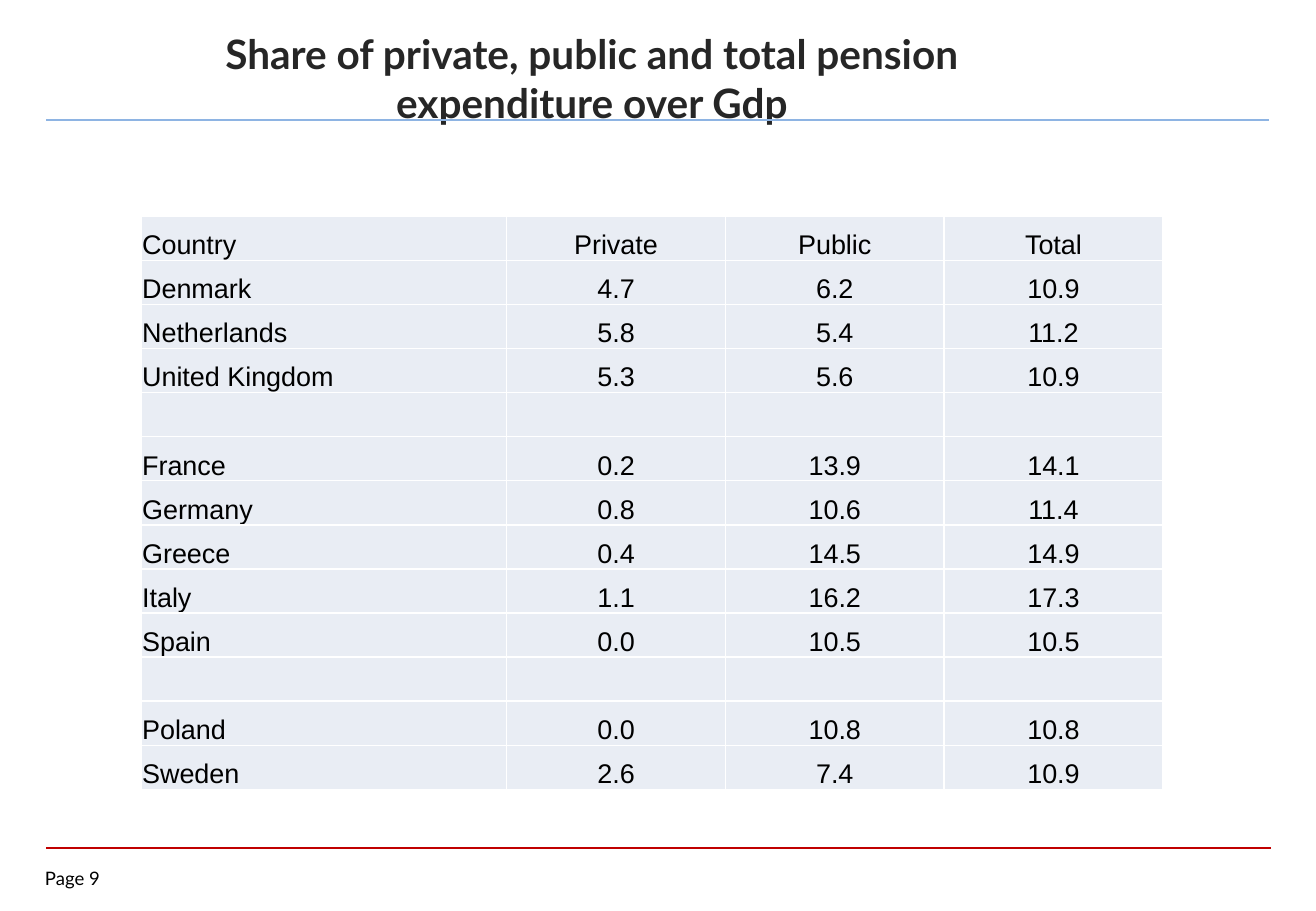
from lxml.etree import SubElement
from pptx import Presentation
from pptx.dml.color import RGBColor
from pptx.enum.shapes import MSO_CONNECTOR as Connector
from pptx.enum.text import MSO_ANCHOR as Anchor, MSO_AUTO_SIZE as AutoSize, PP_ALIGN as Align
from pptx.oxml.ns import qn
from pptx.util import Inches, Pt

EXPENDITURE = [
    ("Country", "Private", "Public", "Total"),
    ("Denmark", "4.7", "6.2", "10.9"),
    ("Netherlands", "5.8", "5.4", "11.2"),
    ("United Kingdom", "5.3", "5.6", "10.9"),
    ("", "", "", ""),
    ("France", "0.2", "13.9", "14.1"),
    ("Germany", "0.8", "10.6", "11.4"),
    ("Greece", "0.4", "14.5", "14.9"),
    ("Italy", "1.1", "16.2", "17.3"),
    ("Spain", "0.0", "10.5", "10.5"),
    ("", "", "", ""),
    ("Poland", "0.0", "10.8", "10.8"),
    ("Sweden", "2.6", "7.4", "10.9"),
]
COLUMN_WIDTHS = (3.01, 1.8, 1.8, 1.8)


def color(value):
    return RGBColor.from_string(value)


def add_run(paragraph, text, font, size, hue, bold=False):
    run = paragraph.add_run()
    run.text = text
    run.font.name = font
    run.font.size = Pt(size)
    run.font.bold = bold
    run.font.color.rgb = color(hue)


def add_rule(slide, left, top, width, hue, weight):
    rule = slide.shapes.add_connector(
        Connector.STRAIGHT, Inches(left), Inches(top), Inches(left + width), Inches(top))
    rule.line.color.rgb = color(hue)
    rule.line.width = Pt(weight)
    SubElement(rule._element.spPr, qn("a:effectLst"))


def add_heading(slide, left, top, width, height):
    title = slide.shapes.title
    title.left, title.top = Inches(left), Inches(top)
    title.width, title.height = Inches(width), Inches(height)
    frame = title.text_frame
    frame.auto_size = AutoSize.NONE
    frame.word_wrap = True
    frame.vertical_anchor = Anchor.TOP
    paragraph = frame.paragraphs[0]
    paragraph.alignment = Align.CENTER
    add_run(paragraph, "Share of private, public and total pension expenditure over Gdp",
            "Lato", 24, "262626", True)


def add_borders(cell, hue, weight):
    properties = cell._tc.get_or_add_tcPr()
    for side in ("lnL", "lnR", "lnT", "lnB"):
        border = SubElement(properties, qn(f"a:{side}"), w=str(Pt(weight)))
        fill = SubElement(border, qn("a:solidFill"))
        SubElement(fill, qn("a:srgbClr"), val=hue)


def fill_cell(cell, text, alignment):
    add_borders(cell, "FFFFFF", 1)
    cell.fill.solid()
    cell.fill.fore_color.rgb = color("E9EDF4")
    cell.vertical_anchor = Anchor.BOTTOM
    cell.margin_left = cell.margin_right = cell.margin_top = Inches(0.01)
    cell.margin_bottom = 0
    paragraph = cell.text_frame.paragraphs[0]
    paragraph.alignment = alignment
    if text:
        add_run(paragraph, text, "Arial", 16, "000000")


def add_expenditure_table(slide, left, top, height):
    table = slide.shapes.add_table(
        len(EXPENDITURE), len(COLUMN_WIDTHS), Inches(left), Inches(top),
        Inches(sum(COLUMN_WIDTHS)), Inches(height)).table
    table.first_row = table.horz_banding = False
    for column, width in zip(table.columns, COLUMN_WIDTHS):
        column.width = Inches(width)
    for row, entries in zip(table.rows, EXPENDITURE):
        row.height = Inches(height / len(EXPENDITURE))
        for index, (cell, entry) in enumerate(zip(row.cells, entries)):
            fill_cell(cell, entry, Align.CENTER if index else Align.LEFT)


def add_page_number(slide, left, top, width, height):
    frame = slide.shapes.add_textbox(
        Inches(left), Inches(top), Inches(width), Inches(height)).text_frame
    frame.word_wrap = True
    frame.margin_left = frame.margin_right = frame.margin_top = frame.margin_bottom = 0
    add_run(frame.paragraphs[0], "Page 9", "Lato", 11, "000000")


def main():
    deck = Presentation()
    deck.slide_width, deck.slide_height = Inches(10.83), Inches(7.5)
    slide = deck.slides.add_slide(deck.slide_layouts[5])
    add_rule(slide, 0.38, 6.98, 10.08, "C00000", 1)
    add_rule(slide, 0.38, 0.99, 10.06, "8EB4E3", 1.5)
    add_page_number(slide, 0.37, 7.14, 0.73, 0.22)
    add_heading(slide, 1.09, 0.19, 7.56, 0.71)
    add_expenditure_table(slide, 1.16, 1.78, 4.72)
    deck.save("out.pptx")


if __name__ == "__main__":
    main()
